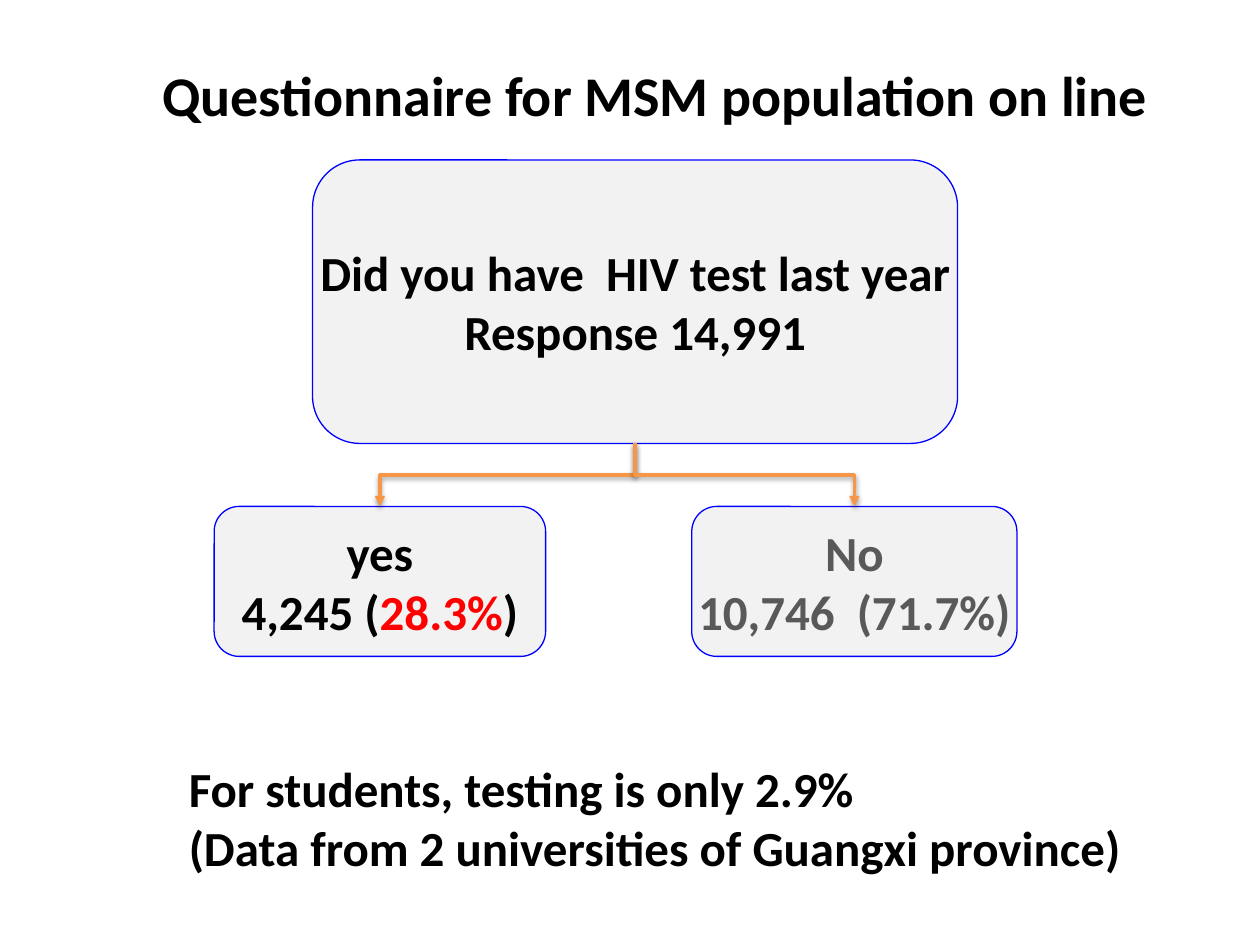
from dataclasses import dataclass

from lxml import etree
from pptx import Presentation
from pptx.dml.color import RGBColor
from pptx.enum.shapes import MSO_CONNECTOR as Connector, MSO_SHAPE as Shape
from pptx.enum.text import MSO_ANCHOR as Anchor, PP_ALIGN as Align
from pptx.oxml.ns import qn
from pptx.util import Pt


@dataclass(frozen=True)
class Theme:
    font: str = "Calibri"
    title_size: int = 32
    body_size: int = 28
    text: str = "000000"
    muted: str = "595959"
    accent: str = "FF0000"
    box_fill: str = "F2F2F2"
    box_line: str = "0000FF"
    arrow: str = "F79646"


class SurveySlide:
    """Draws the parts of a survey flow chart on one slide in one theme."""

    def __init__(self, slide, theme):
        self.slide = slide
        self.theme = theme

    def fill_text(self, frame, lines, size, color, align, wrap):
        frame.word_wrap = wrap
        frame.vertical_anchor = Anchor.MIDDLE
        for index, line in enumerate(lines):
            paragraph = frame.paragraphs[0] if index == 0 else frame.add_paragraph()
            paragraph.alignment = align
            font = paragraph.font
            font.name, font.size, font.bold = self.theme.font, Pt(size), True
            font.color.rgb = RGBColor.from_string(color)
            for part in [line] if isinstance(line, str) else line:
                text, run_color = (part, None) if isinstance(part, str) else part
                run = paragraph.add_run()
                run.text = text
                if run_color:
                    run.font.color.rgb = RGBColor.from_string(run_color)

    def text(self, left, top, width, height, lines, size, align=Align.LEFT):
        shape = self.slide.shapes.add_textbox(Pt(left), Pt(top), Pt(width), Pt(height))
        self.fill_text(shape.text_frame, lines, size, self.theme.text, align, True)

    def box(self, left, top, width, height, lines, color):
        shape = self.slide.shapes.add_shape(
            Shape.ROUNDED_RECTANGLE, Pt(left), Pt(top), Pt(width), Pt(height)
        )
        shape.shadow.inherit = False
        shape.fill.solid()
        shape.fill.fore_color.rgb = RGBColor.from_string(self.theme.box_fill)
        shape.line.color.rgb = RGBColor.from_string(self.theme.box_line)
        shape.line.width = Pt(0.75)
        self.fill_text(shape.text_frame, lines, self.theme.body_size, color, Align.CENTER, False)
        return shape

    def branch(self, parent, child):
        start_x, start_y = parent.left + parent.width // 2, parent.top + parent.height
        end_x, end_y = child.left + child.width // 2, child.top
        middle_x, middle_y = (start_x + end_x) // 2, (start_y + end_y) // 2
        half_run, half_drop = abs(end_x - start_x) // 2, (end_y - start_y) // 2
        side = 1 if end_x > start_x else -1
        connector = self.slide.shapes.add_connector(
            Connector.ELBOW,
            middle_x + side * half_drop,
            middle_y - half_run,
            middle_x - side * half_drop,
            middle_y + half_run,
        )
        connector.line.color.rgb = RGBColor.from_string(self.theme.arrow)
        connector.line.width = Pt(2)
        properties = connector._element.spPr
        angle = 270 if side > 0 else 90
        properties.find(qn("a:xfrm")).set("rot", str(angle * 60000))
        etree.SubElement(properties.find(qn("a:ln")), qn("a:tailEnd"), type="triangle")
        effects = etree.SubElement(properties, qn("a:effectLst"))
        shadow = etree.SubElement(
            effects, qn("a:outerShdw"), blurRad=str(Pt(3.1)), dist=str(Pt(1.6)),
            dir=str(90 * 60000), rotWithShape="0",
        )
        shade = etree.SubElement(shadow, qn("a:srgbClr"), val=self.theme.text)
        etree.SubElement(shade, qn("a:alpha"), val="38000")


def main():
    presentation = Presentation()
    presentation.slide_width, presentation.slide_height = Pt(720), Pt(540)
    theme = Theme()
    survey = SurveySlide(presentation.slides.add_slide(presentation.slide_layouts[6]), theme)

    survey.text(50.4, 25.9, 648, 55.4, ["Questionnaire for MSM population on line"],
                theme.title_size, Align.CENTER)
    question = survey.box(178.6, 91.4, 368.6, 162,
                          ["Did you have  HIV test last year", "Response 14,991"], theme.text)
    answer_top, answer_height = 289.4, 85.7
    no = survey.box(395.3, answer_top, 185.8, answer_height,
                    ["No", "10,746  (71.7%)"], theme.muted)
    yes = survey.box(122.4, answer_top, 189.4, answer_height,
                     ["yes", ["4,245 (", ("28.3%", theme.accent), ")"]], theme.text)
    for answer in (yes, no):
        survey.branch(question, answer)
    survey.text(100.8, 429.8, 607, 75,
                ["For students, testing is only 2.9%",
                 "(Data from 2 universities of Guangxi province)"], theme.body_size)

    presentation.save("out.pptx")


if __name__ == "__main__":
    main()
